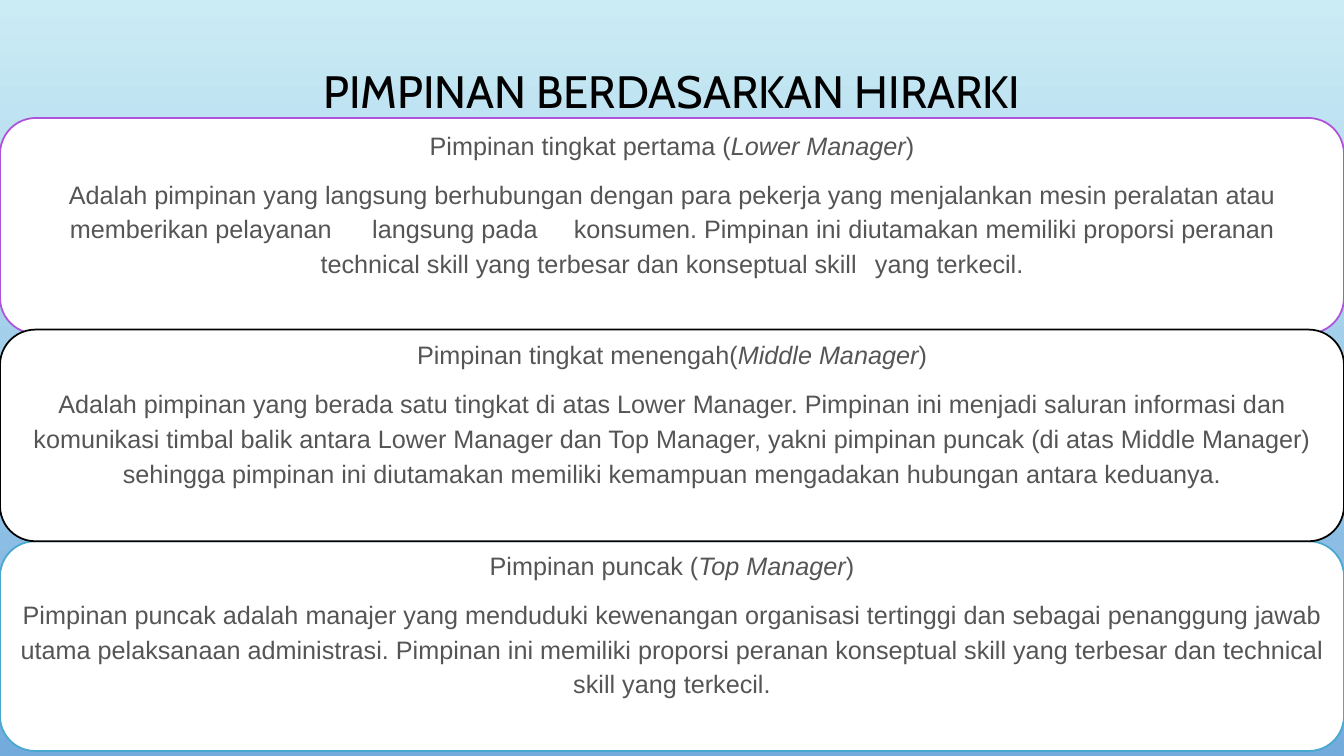
import pptx
import pptx.dml.color
import pptx.enum.shapes
import pptx.enum.text
import pptx.oxml.ns
import pptx.util
from lxml import etree

Pt = pptx.util.Pt
RGBColor = pptx.dml.color.RGBColor
MIDDLE = pptx.enum.text.MSO_ANCHOR.MIDDLE
CENTER = pptx.enum.text.PP_ALIGN.CENTER
ROUNDED = pptx.enum.shapes.MSO_SHAPE.FLOWCHART_ALTERNATE_PROCESS

SKY = RGBColor(0xCB, 0xEC, 0xF5)
BLUE = RGBColor(0x73, 0xAB, 0xDD)
WHITE = RGBColor(0xFF, 0xFF, 0xFF)
BLACK = RGBColor(0x00, 0x00, 0x00)
GREY = RGBColor(0x55, 0x55, 0x55)
PURPLE = RGBColor(0xAE, 0x52, 0xD9)
CYAN = RGBColor(0x48, 0xA8, 0xD0)

WIDTH, HEIGHT = 960, 540

# top, height, outline, heading, English term, description
LEVELS = [
    (84.24, 154.08, PURPLE, "Pimpinan tingkat pertama (", "Lower Manager",
     "Adalah pimpinan yang langsung berhubungan dengan para pekerja yang "
     "menjalankan mesin peralatan atau memberikan pelayanan \tlangsung pada "
     "\tkonsumen. Pimpinan ini diutamakan memiliki proporsi peranan technical "
     "skill yang terbesar dan konseptual skill \tyang terkecil."),
    (386.64, 149.76, CYAN, "Pimpinan puncak (", "Top Manager",
     "Pimpinan puncak adalah manajer yang menduduki kewenangan organisasi "
     "tertinggi dan sebagai penanggung jawab utama pelaksanaan administrasi. "
     "Pimpinan ini memiliki proporsi peranan konseptual skill yang terbesar "
     "dan technical skill yang terkecil."),
    (235.44, 151.2, BLACK, "Pimpinan tingkat menengah(", "Middle Manager",
     "Adalah pimpinan yang berada satu tingkat di atas Lower Manager. Pimpinan "
     "ini menjadi saluran informasi dan komunikasi timbal balik antara Lower "
     "Manager dan Top Manager, yakni pimpinan puncak (di atas Middle Manager) "
     "sehingga pimpinan ini diutamakan memiliki kemampuan mengadakan hubungan "
     "antara keduanya."),
]


class Deck:
    title_font, body_font = "Cabin", "Arial"
    title_size, body_size = 32.4, 18
    tab_stop = 36
    bottom_inset = 37.4

    def __init__(self, prs):
        self.slide = prs.slides.add_slide(prs.slide_layouts[6])

    def background(self, top, bottom):
        fill = self.slide.background.fill
        fill.gradient()
        fill.gradient_angle = 270
        for stop, color, position in zip(fill.gradient_stops, (top, bottom), (0, 1)):
            stop.color.rgb = color
            stop.position = position

    def style(self, p, font, size, color, spacing):
        p.alignment = CENTER
        p.line_spacing = spacing
        p.font.name = font
        p.font.size = Pt(size)
        p.font.color.rgb = color

    def title(self, text, left, top, width, height):
        sp = self.slide.shapes.add_textbox(Pt(left), Pt(top), Pt(width), Pt(height))
        tf = sp.text_frame
        tf.word_wrap = True
        tf.vertical_anchor = MIDDLE
        p = tf.paragraphs[0]
        p.text = text
        self.style(p, self.title_font, self.title_size, BLACK, 0.9)

    def body(self, p, runs):
        """Fill a paragraph from (text, italic) pairs."""
        for text, italic in runs:
            r = p.add_run()
            r.text = text
            if italic:
                r.font.italic = True
        tabs = etree.SubElement(p._p.get_or_add_pPr(), pptx.oxml.ns.qn("a:tabLst"))
        etree.SubElement(tabs, pptx.oxml.ns.qn("a:tab"),
                         pos=str(Pt(self.tab_stop)), algn="l")
        p.space_after = Pt(10)
        self.style(p, self.body_font, self.body_size, GREY, 1.15)

    def level(self, top, height, outline, heading, term, description):
        sp = self.slide.shapes.add_shape(ROUNDED, 0, Pt(top), Pt(WIDTH), Pt(height))
        sp.shadow.inherit = False
        sp.fill.solid()
        sp.fill.fore_color.rgb = WHITE
        sp.line.color.rgb = outline
        sp.line.width = Pt(1.25)
        tf = sp.text_frame
        tf.word_wrap = True
        tf.vertical_anchor = MIDDLE
        tf.margin_bottom = Pt(self.bottom_inset)
        self.body(tf.paragraphs[0], [(heading, False), (term, True), (")", False)])
        self.body(tf.add_paragraph(), [(description, False)])


def main():
    prs = pptx.Presentation()
    prs.slide_width, prs.slide_height = Pt(WIDTH), Pt(HEIGHT)
    deck = Deck(prs)
    deck.background(SKY, BLUE)
    deck.title("PIMPINAN BERDASARKAN HIRARKI", 72, 48.96, 816, 36.72)
    for level in LEVELS:
        deck.level(*level)
    prs.save("out.pptx")


if __name__ == "__main__":
    main()
